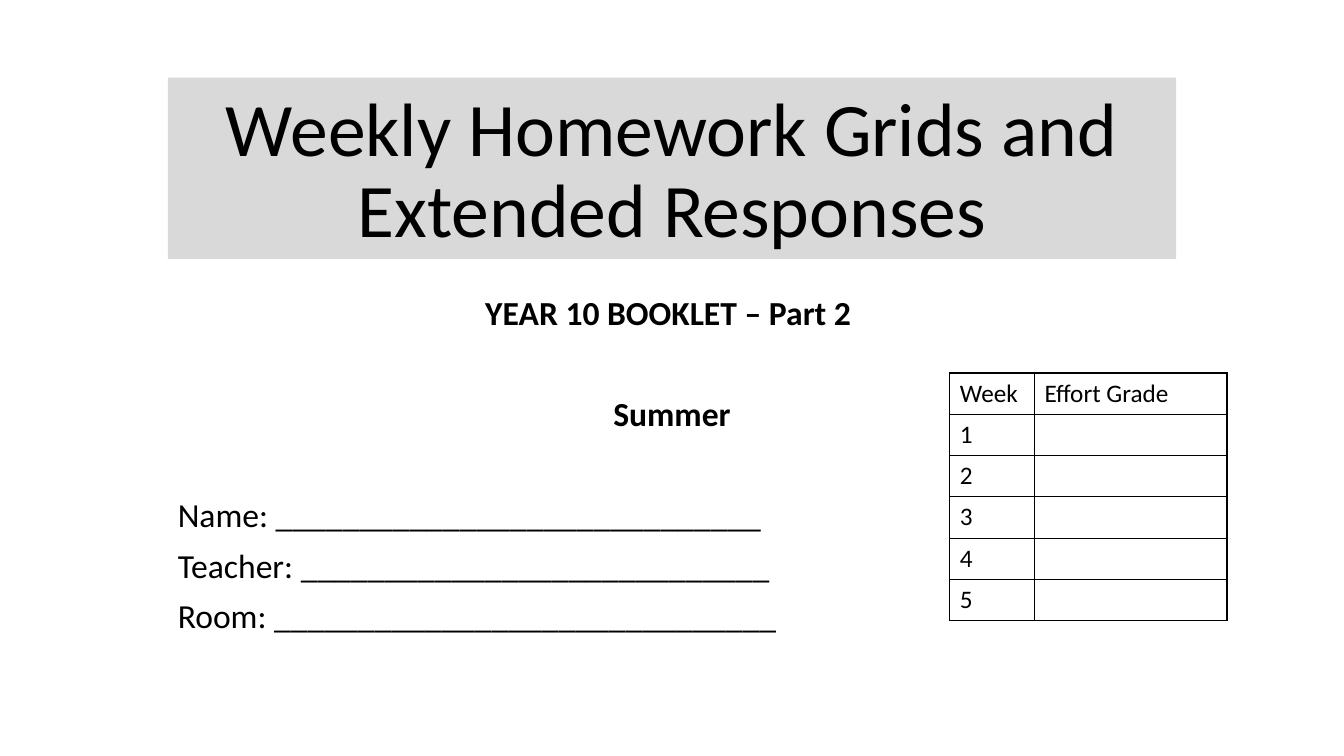
from lxml import etree
from pptx import Presentation
from pptx.dml.color import RGBColor
from pptx.enum.shapes import MSO_SHAPE
from pptx.enum.text import MSO_ANCHOR, PP_ALIGN
from pptx.oxml.ns import qn
from pptx.util import Inches, Pt

LEFT, CENTER = PP_ALIGN.LEFT, PP_ALIGN.CENTER
TOP, BOTTOM = MSO_ANCHOR.TOP, MSO_ANCHOR.BOTTOM

BLACK, GREY = "000000", "D9D9D9"
FONT = "Calibri"

TITLE = "Weekly Homework Grids and Extended Responses"
# text, alignment, bold, space before in points
GAP, WIDE_GAP = 10, 46.4
BOOKLET_LINES = [
    ("YEAR 10 BOOKLET – Part 2 ", CENTER, True, GAP),
    ("Summer", CENTER, True, WIDE_GAP),
    ("Name: " + "_" * 29, LEFT, False, WIDE_GAP),
    ("Teacher: " + "_" * 28, LEFT, False, GAP),
    ("Room: " + "_" * 30, LEFT, False, GAP),
]
GRADE_HEADER = ("Week", "Effort Grade")
WEEKS = 5

SLIDE_W, SLIDE_H = 13.33, 7.5
BLOCK_W = 10
BLOCK_X = (SLIDE_W - BLOCK_W) / 2
TABLE_X, TABLE_Y = 9.42, 3.7
COLUMN_WIDTHS, ROW_H = (0.84, 1.91), 0.41


def rgb(color):
    return RGBColor.from_string(color)


def box(left, top, width, height):
    return [Inches(v) for v in (left, top, width, height)]


def write(p, text, size, bold=False, **paragraph_format):
    for name, value in paragraph_format.items():
        setattr(p, name, value)
    r = p.add_run()
    r.text = text
    for name, value in {"name": FONT, "size": Pt(size), "bold": bold}.items():
        setattr(r.font, name, value)
    r.font.color.rgb = rgb(BLACK)


def add_title(s):
    sp = s.shapes.add_shape(MSO_SHAPE.RECTANGLE, *box(BLOCK_X, 0.77, BLOCK_W, 1.8))
    sp.shadow.inherit = False
    sp.fill.solid()
    sp.fill.fore_color.rgb = rgb(GREY)
    sp.line.fill.background()
    tf = sp.text_frame
    tf.word_wrap, tf.vertical_anchor = True, BOTTOM
    write(tf.paragraphs[0], TITLE, 54, alignment=CENTER, line_spacing=0.9)


def add_booklet_lines(s):
    tf = s.shapes.add_textbox(*box(BLOCK_X, 2.89, BLOCK_W, 3.71)).text_frame
    tf.word_wrap, tf.vertical_anchor = True, TOP
    for i, (text, alignment, bold, gap) in enumerate(BOOKLET_LINES):
        p = tf.add_paragraph() if i else tf.paragraphs[0]
        write(p, text, 24, bold, alignment=alignment, line_spacing=0.9,
              space_before=Pt(gap))


def set_borders(cell):
    """Draw a one-point line on all four sides of the cell."""
    tc_pr = cell._tc.get_or_add_tcPr()
    for i, side in enumerate(("a:lnL", "a:lnR", "a:lnT", "a:lnB")):
        ln = etree.Element(qn(side), w=str(Pt(1)))
        fill = etree.SubElement(ln, qn("a:solidFill"))
        etree.SubElement(fill, qn("a:srgbClr"), val=BLACK)
        tc_pr.insert(i, ln)


def add_grade_table(s):
    rows = [GRADE_HEADER] + [(str(week), "") for week in range(1, WEEKS + 1)]
    frame = s.shapes.add_table(
        len(rows), len(COLUMN_WIDTHS),
        *box(TABLE_X, TABLE_Y, sum(COLUMN_WIDTHS), ROW_H * len(rows)))
    table = frame.table
    table.first_row = table.horz_banding = False
    for column, width in zip(table.columns, COLUMN_WIDTHS):
        column.width = Inches(width)
    for y, row in enumerate(rows):
        table.rows[y].height = Inches(ROW_H)
        for x, text in enumerate(row):
            cell = table.cell(y, x)
            cell.fill.background()
            set_borders(cell)
            if text:
                write(cell.text_frame.paragraphs[0], text, 18)


def main():
    prs = Presentation()
    prs.slide_width, prs.slide_height = Inches(SLIDE_W), Inches(SLIDE_H)
    s = prs.slides.add_slide(prs.slide_layouts[6])
    add_title(s)
    add_booklet_lines(s)
    add_grade_table(s)
    prs.save("out.pptx")


if __name__ == "__main__":
    main()
